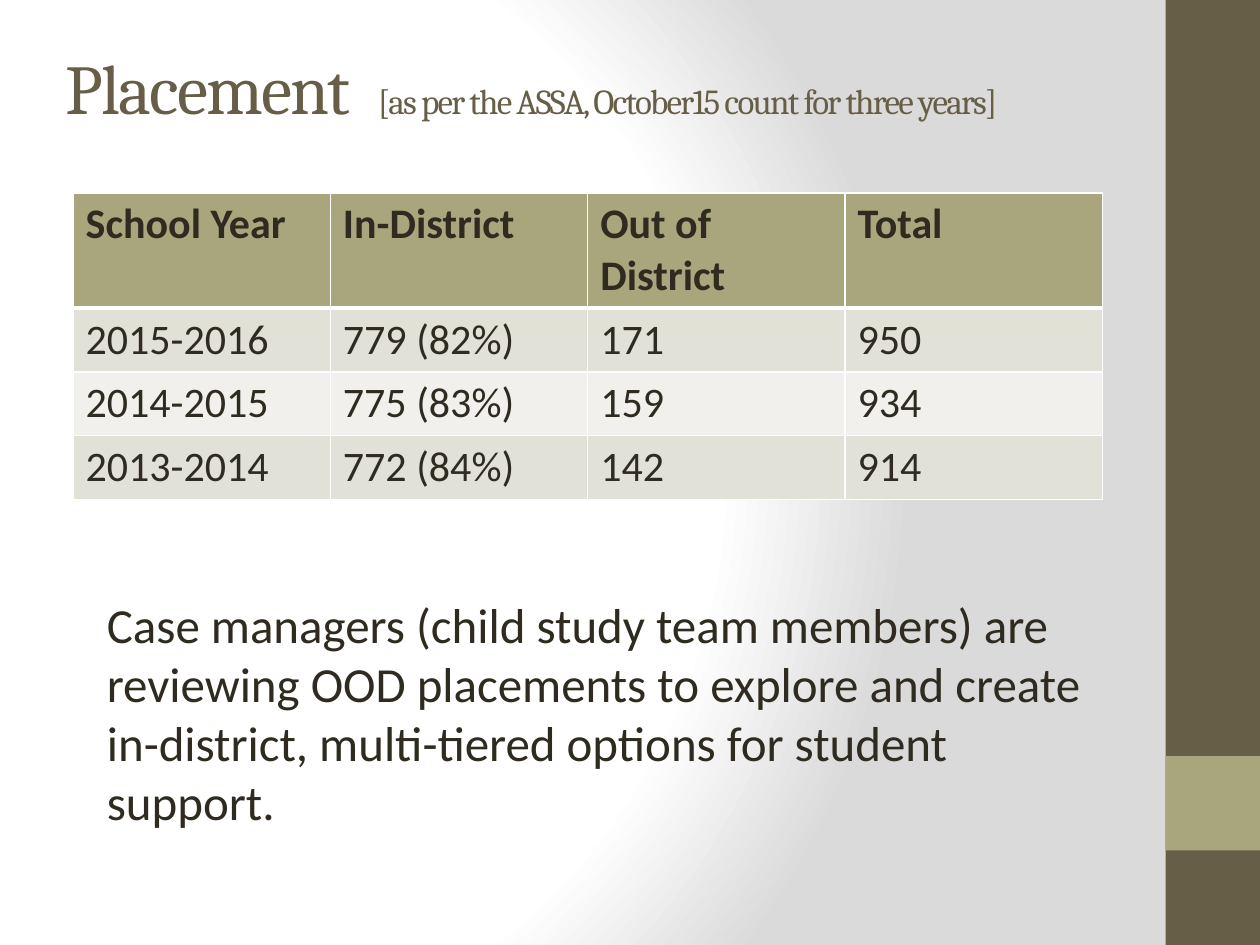
from dataclasses import dataclass

from pptx import Presentation
from pptx.dml.color import RGBColor
from pptx.enum.shapes import MSO_SHAPE
from pptx.enum.text import MSO_ANCHOR, MSO_AUTO_SIZE, PP_ALIGN
from pptx.oxml import parse_xml
from pptx.oxml.ns import nsdecls
from pptx.util import Inches, Pt


@dataclass(frozen=True)
class Theme:
    brown: str = "675E47"
    olive: str = "A9A57C"
    ink: str = "2F2B20"
    white: str = "FFFFFF"
    grey: str = "DADADA"
    bands: tuple = ("E2E1D7", "F1F0EC")
    head: str = "Cambria"
    body: str = "Calibri"
    title: int = 40
    note: int = 20
    cell: int = 24
    text: int = 28


THEME = Theme()
WIDE, HIGH = 10, 7.5
ROWS = [
    ("School Year", "In-District", "Out of District", "Total"),
    ("2015-2016", "779 (82%)", "171", "950"),
    ("2014-2015", "775 (83%)", "159", "934"),
    ("2013-2014", "772 (84%)", "142", "914"),
]


def write(para, text, size=THEME.text, font=THEME.body, color=THEME.ink,
          bold=False, track=0):
    """Add a run; track is letter spacing in points."""
    run = para.add_run()
    run.text = text
    run.font.size = Pt(size)
    run.font.name = font
    run.font.bold = bold
    run.font.color.rgb = RGBColor.from_string(color)
    if track:
        run.font._element.set("spc", str(round(track * 100)))


def place(shape, box):
    shape.left, shape.top, shape.width, shape.height = map(Inches, box)


def backdrop(slide):
    stops = [(0, THEME.white), (75, THEME.white), (100, THEME.grey)]
    marks = "".join(
        f'<a:gs pos="{pos * 1000}"><a:srgbClr val="{color}"/></a:gs>'
        for pos, color in stops)
    slide.element.cSld.insert(0, parse_xml(
        f'<p:bg {nsdecls("p", "a")}><p:bgPr><a:gradFill rotWithShape="1">'
        f'<a:gsLst>{marks}</a:gsLst><a:path path="circle">'
        '<a:fillToRect l="20000" t="50000" r="100000" b="50000"/></a:path>'
        '</a:gradFill><a:effectLst/></p:bgPr></p:bg>'))


def sidebar(slide, box):
    """Full-height bar with a square accent at eight tenths of its height."""
    left, top, width, height = box
    accent = (left, top + height * 0.8, width, width)
    for area, color in ((box, THEME.brown), (accent, THEME.olive)):
        bar = slide.shapes.add_shape(MSO_SHAPE.RECTANGLE, *map(Inches, area))
        bar.shadow.inherit = False
        bar.fill.solid()
        bar.fill.fore_color.rgb = RGBColor.from_string(color)
        bar.line.fill.background()


def heading(slide, box):
    title = slide.shapes.title
    place(title, box)
    frame = title.text_frame
    frame.auto_size = MSO_AUTO_SIZE.NONE
    frame.vertical_anchor = MSO_ANCHOR.TOP
    para = frame.paragraphs[0]
    para.alignment = PP_ALIGN.LEFT
    look = {"font": THEME.head, "color": THEME.brown}
    write(para, "Placement", size=THEME.title, track=-1, **look)
    write(para, " ", size=THEME.title, track=6.8, **look)
    write(para, "[as per the ASSA, October15 count for three years]",
          size=THEME.note, track=-1, **look)


def border(cell, base):
    """White rules on all sides, the bottom one base points thick."""
    props = cell._tc.get_or_add_tcPr()
    sides = (("L", 1), ("R", 1), ("T", 1), ("B", base))
    for at, (side, width) in enumerate(sides):
        props.insert(at, parse_xml(
            f'<a:ln{side} {nsdecls("a")} w="{Pt(width)}"><a:solidFill>'
            f'<a:srgbClr val="{THEME.white}"/></a:solidFill></a:ln{side}>'))


def counts(slide, box):
    """Table whose header takes 3/8 of the height."""
    rows, cols = len(ROWS), len(ROWS[0])
    table = slide.shapes.add_table(rows, cols, *map(Inches, box)).table
    top = box[3] * 3 / 8
    rest = (box[3] - top) / (rows - 1)
    for r, values in enumerate(ROWS):
        first = r == 0
        table.rows[r].height = Inches(top if first else rest)
        fill = THEME.olive if first else THEME.bands[(r - 1) % 2]
        for c, value in enumerate(values):
            cell = table.cell(r, c)
            cell.fill.solid()
            cell.fill.fore_color.rgb = RGBColor.from_string(fill)
            border(cell, 3 if first else 1)
            write(cell.text_frame.paragraphs[0], value,
                  size=THEME.cell, bold=first)


def remark(slide, box):
    frame = slide.shapes.add_textbox(*map(Inches, box)).text_frame
    frame.word_wrap = True
    write(frame.paragraphs[0],
          "Case managers (child study team members) are reviewing OOD "
          "placements to explore and create in-district, multi-tiered "
          "options for student support.")


def main():
    deck = Presentation()
    deck.slide_width, deck.slide_height = Inches(WIDE), Inches(HIGH)
    slide = deck.slides.add_slide(deck.slide_layouts[5])
    side = WIDE * 0.075
    backdrop(slide)
    sidebar(slide, (WIDE - side, 0, side, HIGH))
    heading(slide, (0.42, HIGH * 0.04, WIDE * 0.83, 1))
    counts(slide, (0.58, 1.53, 8.17, HIGH * 0.32))
    remark(slide, (side, 4.67, WIDE * 0.8, 2.29))
    deck.save("out.pptx")


if __name__ == "__main__":
    main()
